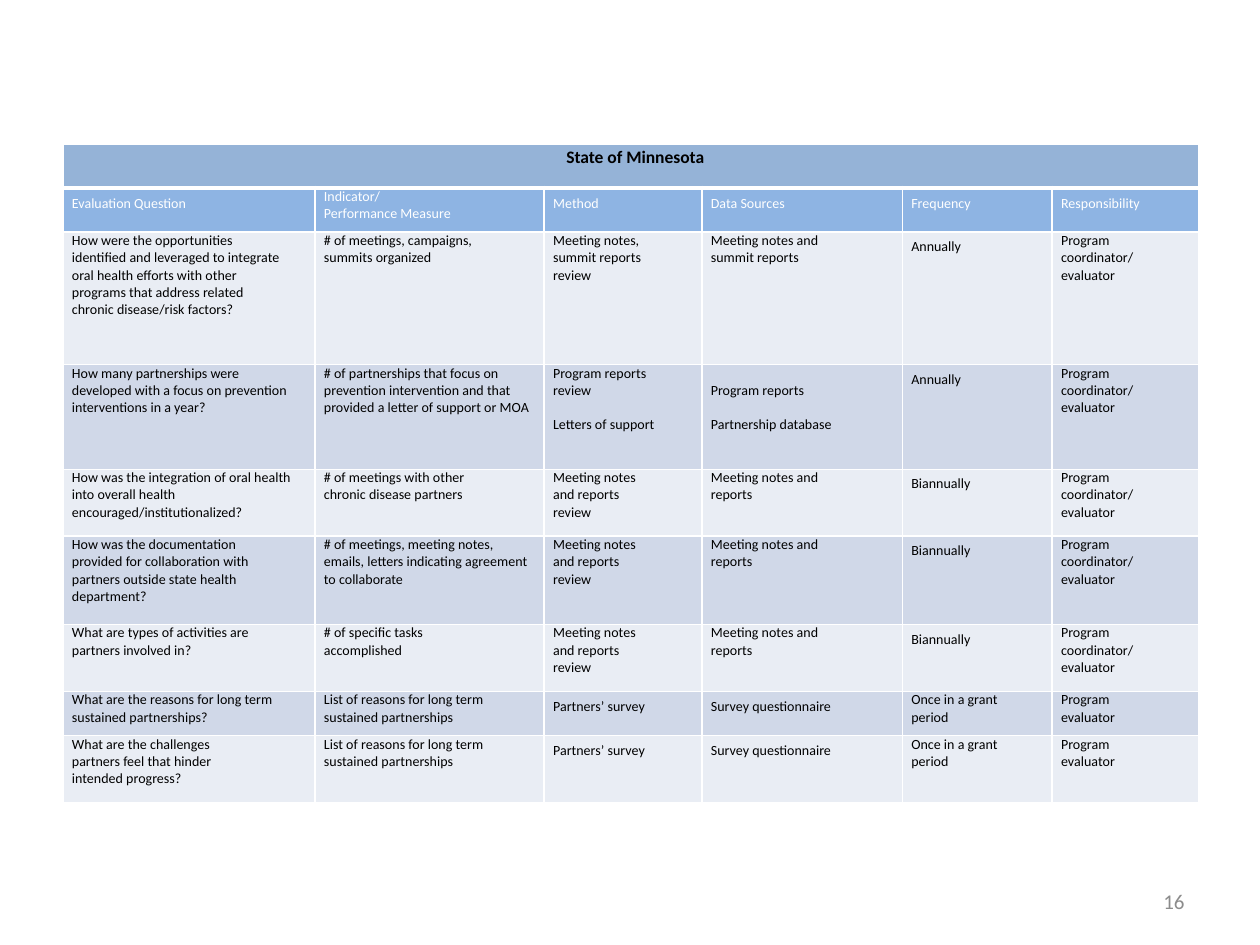
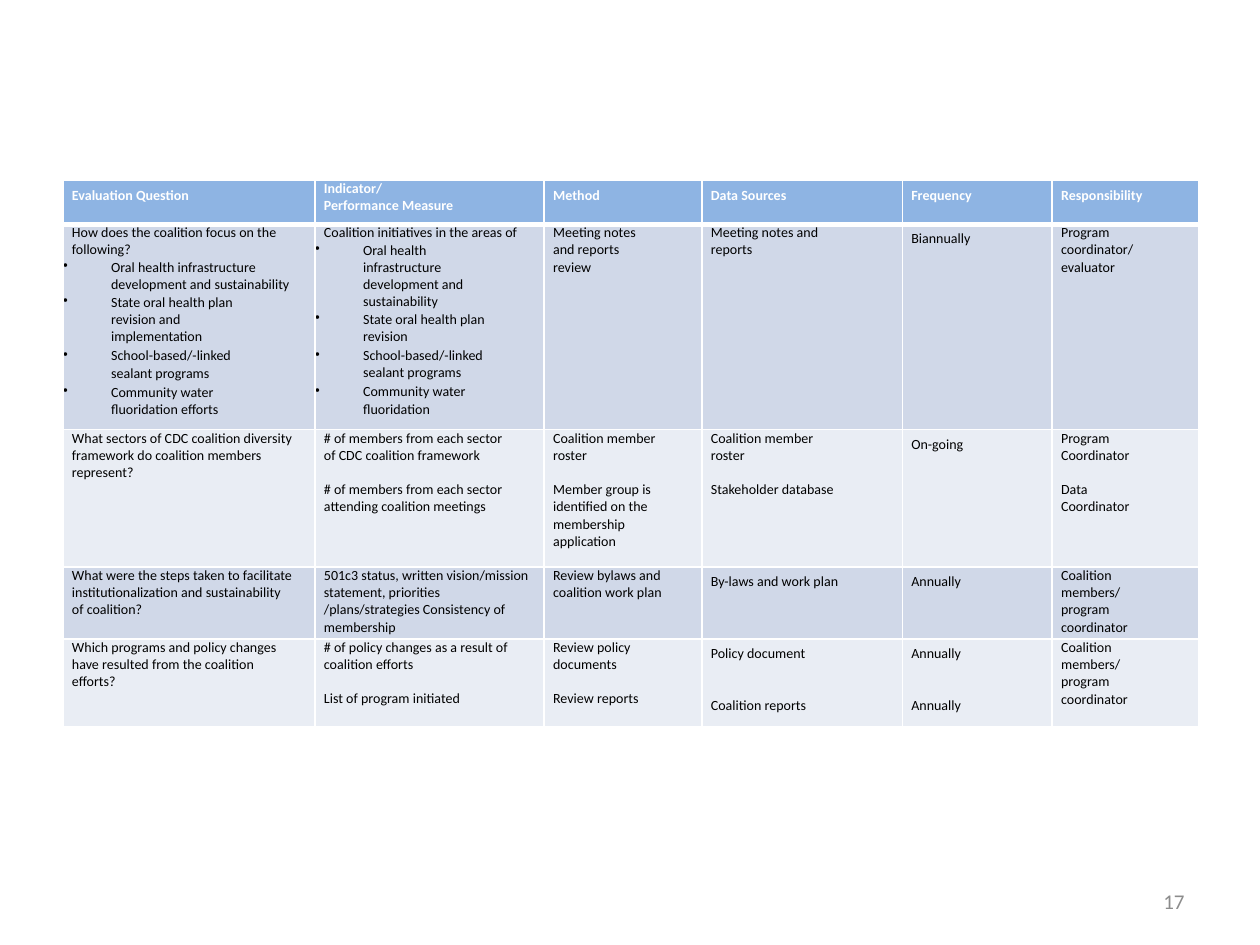
from dataclasses import dataclass

from lxml import etree
from pptx import Presentation
from pptx.dml.color import RGBColor
from pptx.enum.text import MSO_ANCHOR, PP_ALIGN
from pptx.oxml.ns import qn
from pptx.util import Cm, Pt

LEFT, CENTER, RIGHT = PP_ALIGN.LEFT, PP_ALIGN.CENTER, PP_ALIGN.RIGHT
MIDDLE = MSO_ANCHOR.MIDDLE

FONT = "Calibri"
BLACK, WHITE, GREY = "000000", "FFFFFF", "8C8C8C"
TITLE_BLUE, HEADER_BLUE = "95B3D7", "8EB4E3"
LIGHT, DARK = "E9EDF4", "D0D8E8"

COLUMN_WIDTHS = [5.08, 4.62, 3.18, 4.04, 3.02, 2.95]
RIGHT_INDENTS = [0.43, 0.23, 0.64, 1.17, 0.74, 1.02]
LEFT_INDENT, BULLET_INDENT = 0.18, 0.97
LINE_GAP = 9.8
HEADER_SPACING, TALL_SPACING = Pt(13.7), Pt(13.4)


@dataclass
class Para:
    """A cell paragraph that departs from the column's usual format."""

    text: str
    right: float | None = None
    before: float = 0
    spacing: object = None
    bullet: bool = False


def tall(text):
    """Return a one-line entry with exact, taller line spacing."""
    return Para(text, spacing=TALL_SPACING)


def after_gap(text, lines=1):
    """Return a paragraph set off from the one above by whole lines."""
    return Para(text, before=LINE_GAP * lines)


def bullet(text, right, before=0.1):
    """Return a bulleted paragraph."""
    return Para(text, right, before, bullet=True)


def color(hex_string):
    """Turn a hex string into a colour."""
    return RGBColor.from_string(hex_string)


ANNUALLY, BIANNUALLY = tall("Annually"), tall("Biannually")
SURVEY = [tall("Partners’ survey"), tall("Survey questionnaire"),
          "Once in a grant period", "Program evaluator"]
COORDINATOR = "Program coordinator/ evaluator"
MEMBERS = "Coalition members/ program coordinator"
NOTES = [Para("Meeting notes and reports review", 1.07),
         "Meeting notes and reports", BIANNUALLY, COORDINATOR]
REASONS = "List of reasons for long term sustained partnerships"

HEADER = [Para("Evaluation Question", spacing=HEADER_SPACING),
          ["Indicator/", "Performance Measure"]]
HEADER += [Para(text, spacing=HEADER_SPACING)
           for text in ("Method", "Data Sources", "Frequency", "Responsibility")]

PARTNERSHIP_ROWS = [
    [Para("How were the opportunities identified and leveraged to integrate oral health "
          "efforts with other programs that address related chronic disease/risk factors?", 0.58),
     Para("# of meetings, campaigns, summits organized", 0.76),
     "Meeting notes, summit reports review", "Meeting notes and summit reports",
     ANNUALLY, COORDINATOR],
    ["How many partnerships were developed with a focus on prevention interventions in a year?",
     "# of partnerships that focus on prevention intervention and that provided a letter "
     "of support or MOA",
     ["Program reports review", after_gap("Letters of support")],
     Para("Program reports Partnership database", spacing=2.0), ANNUALLY, COORDINATOR],
    ["How was the integration of oral health into overall health "
     "encouraged/institutionalized?",
     Para("# of meetings with other chronic disease partners", 1.14), *NOTES],
    [Para("How was the documentation provided for collaboration with partners outside "
          "state health department?", 0.64),
     "# of meetings, meeting notes, emails, letters indicating agreement to collaborate",
     *NOTES],
    ["What are types of activities are partners involved in?",
     Para("# of specific tasks accomplished", 1.27), *NOTES],
    ["What are the reasons for long term sustained partnerships?", REASONS, *SURVEY],
    [Para("What are the challenges partners feel that hinder intended progress?", 1.27),
     REASONS, *SURVEY],
]

COALITION_ROWS = [
    [["How does the coalition focus on the following?",
      bullet("Oral health infrastructure development and sustainability", 0.43, 0.2),
      bullet("State oral health plan revision and implementation", 1.27),
      bullet("School-based/-linked sealant programs", 1.27, 1.2),
      bullet("Community water fluoridation efforts", 1.27, 1.1)],
     ["Coalition initiatives in the areas of",
      bullet("Oral health infrastructure development and sustainability", 1),
      bullet("State oral health plan revision", 1),
      bullet("School-based/-linked sealant programs", 1, 1.2),
      bullet("Community water fluoridation", 1, 1.1)], *NOTES],
    ["What sectors of CDC coalition diversity framework do coalition members represent?",
     [Para("# of members from each sector of CDC coalition framework", 0.71),
      after_gap("# of members from each sector attending coalition meetings")],
     ["Coalition member roster",
      after_gap("Member group is identified on the membership application")],
     ["Coalition member roster", after_gap("Stakeholder database")],
     tall("On-going"), ["Program Coordinator", after_gap("Data Coordinator")]],
    ["What were the steps taken to facilitate institutionalization and sustainability "
     "of coalition?",
     "501c3 status, written vision/mission statement, priorities /plans/strategies "
     "Consistency of membership",
     "Review bylaws and coalition work plan", tall("By-laws and work plan"),
     ANNUALLY, MEMBERS],
    ["Which programs and policy changes have resulted from the coalition efforts?",
     ["# of policy changes as a result of coalition efforts",
      after_gap("List of program initiated")],
     ["Review policy documents", after_gap("Review reports")],
     [tall("Policy document"), after_gap("Coalition reports", 2)],
     [ANNUALLY, after_gap("Annually", 2)], MEMBERS],
]


class Deck:
    """Hold the shared style and the slide being built."""

    def __init__(self):
        """Start an empty 4:3 presentation."""
        self.presentation = Presentation()
        self.presentation.slide_width = Cm(25.4)
        self.presentation.slide_height = Cm(19.05)
        self.slide = None

    def add_slide(self, number):
        """Add a blank slide with its page number."""
        self.slide = self.presentation.slides.add_slide(self.presentation.slide_layouts[6])
        box = self.slide.shapes.add_textbox(Cm(18.21), Cm(17.65), Cm(5.92), Cm(1.02))
        text_frame = box.text_frame
        text_frame.word_wrap = True
        text_frame.vertical_anchor = MIDDLE
        text_frame.text = str(number)
        text_frame.paragraphs[0].alignment = RIGHT
        self.format_runs(text_frame.paragraphs[0], 12, GREY)

    def format_runs(self, paragraph, size, font_color, bold=False):
        """Give the runs of a paragraph their font."""
        for run in paragraph.runs:
            run.font.name = FONT
            run.font.size = Pt(size)
            run.font.bold = bold
            run.font.color.rgb = color(font_color)

    def add_table(self, top, heights):
        """Add an unstyled table with the shared columns."""
        frame = self.slide.shapes.add_table(
            len(heights), len(COLUMN_WIDTHS), Cm(1.27), Cm(top),
            Cm(sum(COLUMN_WIDTHS)), Cm(sum(heights)))
        table = frame.table
        table.first_row = table.horz_banding = False
        for column, width in zip(table.columns, COLUMN_WIDTHS):
            column.width = Cm(width)
        for row, height in zip(table.rows, heights):
            row.height = Cm(height)
        for index, row in enumerate(table.rows):
            for cell in row.cells:
                self.style_cell(cell, index)
        return table

    def style_cell(self, cell, row_index):
        """Remove the margins and draw white borders, thick below the first row."""
        cell.margin_left = cell.margin_right = cell.margin_top = cell.margin_bottom = 0
        widths = {"lnL": 1, "lnR": 1, "lnT": 3 if row_index == 1 else 1,
                  "lnB": 3 if row_index == 0 else 1}
        properties = cell._tc.get_or_add_tcPr()
        for position, (tag, width) in enumerate(widths.items()):
            line = etree.Element(qn(f"a:{tag}"), w=str(Pt(width)))
            fill = etree.SubElement(line, qn("a:solidFill"))
            etree.SubElement(fill, qn("a:srgbClr"), val=WHITE)
            properties.insert(position, line)

    def fill_cell(self, cell, content, fill, right=0.0, size=8, font_color=BLACK,
                  bold=False, alignment=LEFT):
        """Write one or more paragraphs into a cell."""
        cell.fill.solid()
        cell.fill.fore_color.rgb = color(fill)
        entries = content if isinstance(content, list) else [content]
        entries = [Para(entry) if isinstance(entry, str) else entry for entry in entries]
        cell.text_frame.text = "\n".join(entry.text for entry in entries)
        for paragraph, entry in zip(cell.text_frame.paragraphs, entries):
            paragraph.alignment = alignment
            paragraph.space_before = Pt(entry.before)
            if entry.spacing:
                paragraph.line_spacing = entry.spacing
            self.indent(paragraph, entry, right if entry.right is None else entry.right)
            self.format_runs(paragraph, size, font_color, bold)

    def indent(self, paragraph, entry, right):
        """Set the paragraph indents and its bullet."""
        properties = paragraph._p.get_or_add_pPr()
        left = BULLET_INDENT if entry.bullet else LEFT_INDENT
        properties.set("marL", str(Cm(left)))
        properties.set("marR", str(Cm(right)))
        properties.set("indent", str(Cm(-left if entry.bullet else 0)))
        if entry.bullet:
            etree.SubElement(properties, qn("a:buChar"), char="•")

    def fill_row(self, row, contents, fill, **style):
        """Fill a table row with one entry per column."""
        for cell, content, right in zip(row.cells, contents, RIGHT_INDENTS):
            self.fill_cell(cell, content, fill, right, **style)

    def evaluation_slide(self, number, top, heights, body, bands, title=None):
        """Add a slide with an evaluation plan table."""
        self.add_slide(number)
        table = self.add_table(top, heights)
        rows = list(table.rows)
        if title:
            first = table.cell(0, 0)
            first.merge(table.cell(0, len(COLUMN_WIDTHS) - 1))
            self.fill_cell(first, Para(title, spacing=HEADER_SPACING), TITLE_BLUE,
                           size=10, bold=True, alignment=CENTER)
            rows = rows[1:]
        self.fill_row(rows[0], HEADER, HEADER_BLUE, font_color=WHITE, bold=not title)
        for index, (row, contents) in enumerate(zip(rows[1:], body)):
            self.fill_row(row, contents, bands[index % 2])


def main():
    """Build and save the two slides."""
    deck = Deck()
    deck.evaluation_slide(16, 2.9, [0.89, 0.89, 2.67, 2.11, 1.35, 1.78, 1.35, 0.89, 1.35],
                          PARTNERSHIP_ROWS, (LIGHT, DARK), "State of Minnesota")
    deck.evaluation_slide(17, 3.63, [0.89, 4.14, 2.77, 1.45, 1.78],
                          COALITION_ROWS, (DARK, LIGHT))
    deck.presentation.save("out.pptx")


if __name__ == "__main__":
    main()
